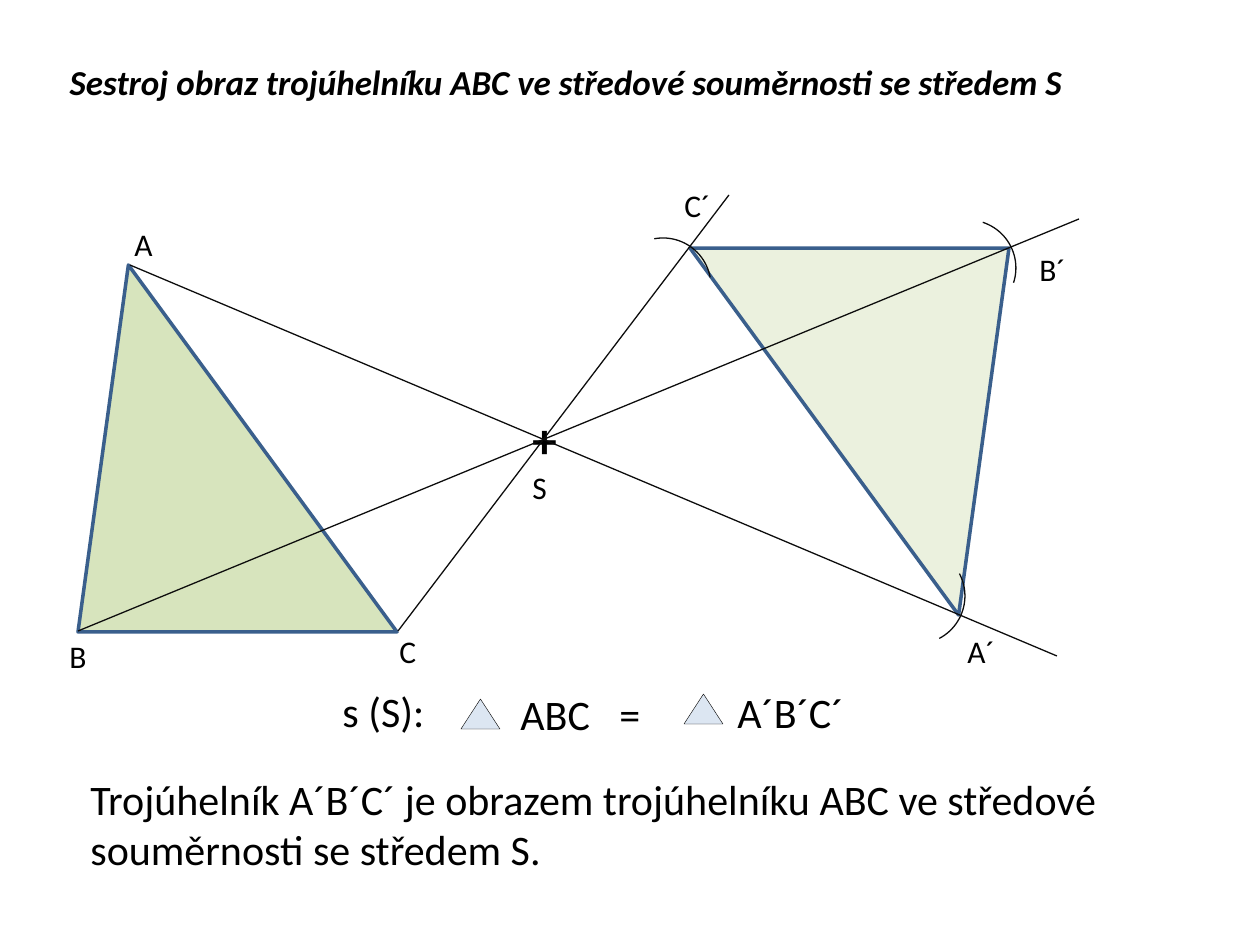
from lxml.etree import SubElement
from pptx import Presentation
from pptx.dml.color import RGBColor
from pptx.enum.shapes import MSO_CONNECTOR as Connector, MSO_SHAPE as Shape
from pptx.enum.text import MSO_ANCHOR as Anchor, MSO_AUTO_SIZE as AutoSize, PP_ALIGN as Align
from pptx.oxml.ns import qn
from pptx.util import Emu, Pt

SCALE = 914400 / 126


def px(value):
    return Emu(round(value * SCALE))


def color(value):
    return RGBColor.from_string(value)


class Board:
    font = "Calibri"
    ink = "000000"
    thin = "0D0D0D"
    edge = "3A5F8C"

    def __init__(self, page):
        self.page = page
        self.shapes = page.shapes

    def start_group(self):
        self.shapes = self.page.shapes.add_group_shape().shapes

    def end_group(self):
        self.shapes = self.page.shapes

    def place(self, item, left, top, width, height):
        item.left, item.top = px(left), px(top)
        item.width, item.height = px(width), px(height)

    def add_span(self, para, text, size, bold=False, italic=False):
        para.alignment = Align.LEFT
        span = para.add_run()
        span.text = text
        span.font.name = self.font
        span.font.size = Pt(size)
        span.font.bold = bold
        span.font.italic = italic
        span.font.color.rgb = color(self.ink)

    def title(self, text, left, top, width, height):
        box = self.page.shapes.title
        self.place(box, left, top, width, height)
        box.text_frame.vertical_anchor = Anchor.MIDDLE
        self.add_span(box.text_frame.paragraphs[0], text, 20, bold=True, italic=True)

    def text(self, lines, left, top, width, height, wrap=False, tab=None):
        box = self.shapes.add_textbox(px(left), px(top), px(width), px(height))
        frame = box.text_frame
        frame.word_wrap = wrap
        frame.auto_size = AutoSize.SHAPE_TO_FIT_TEXT
        for index, (text, size, bold) in enumerate(lines):
            para = frame.paragraphs[0] if index == 0 else frame.add_paragraph()
            self.add_span(para, text, size, bold)
            if tab:
                stops = SubElement(para._p.get_or_add_pPr(), qn("a:tabLst"))
                SubElement(stops, qn("a:tab"), pos=str(px(tab)), algn="l")

    def outline(self, kind, left, top, width, height, line, weight, fill=None):
        item = self.shapes.add_shape(kind, px(left), px(top), px(width), px(height))
        item.shadow.inherit = False
        item.line.color.rgb = color(line)
        item.line.width = Pt(weight)
        if fill:
            item.fill.solid()
            item.fill.fore_color.rgb = color(fill)
        else:
            item.fill.background()
        return item

    def triangle(self, left, top, fill, rotation=0):
        item = self.outline(Shape.ISOSCELES_TRIANGLE, left, top, 319, 367, self.edge, 2, fill)
        item.adjustments[0] = 0.158
        item.rotation = rotation

    def symbol(self, left, top):
        self.outline(Shape.ISOSCELES_TRIANGLE, left, top, 39, 30, self.thin, 0.25, "DCE6F2")

    def arc(self, left, top, rotation):
        self.outline(Shape.ARC, left, top, 96, 96, self.thin, 0.75).rotation = rotation

    def ray(self, x1, y1, x2, y2):
        line = self.shapes.add_connector(Connector.STRAIGHT, px(x1), px(y1), px(x2), px(y2))
        line.line.color.rgb = color(self.thin)
        line.line.width = Pt(0.75)
        SubElement(line._element.spPr, qn("a:effectLst"))


def main():
    deck = Presentation()
    deck.slide_width, deck.slide_height = px(1260), px(945)
    board = Board(deck.slides.add_slide(deck.slide_layouts[5]))

    board.title("Sestroj obraz trojúhelníku ABC ve středové souměrnosti se středem S",
                57, 38, 1019, 88)
    board.triangle(690, 248, "EBF1DE", 180)
    board.triangle(78, 265, "D7E4BD")
    board.text([("+", 28, True), ("S", 18, False)], 520, 403, 50, 111)

    for ray in [(78, 631, 1079, 219), (130, 265, 1057, 656), (398, 631, 729, 195)]:
        board.ray(*ray)
    for arc in [(869, 548, 62.3), (615, 238, 349.6), (920, 220, 18)]:
        board.arc(*arc)

    vertices = [("A", 122, 219, 44), ("B", 57, 631, 43), ("C", 387, 626, 43),
                ("A´", 955, 626, 53), ("B´", 1027, 244, 52), ("C´", 672, 180, 52)]
    for name, left, top, width in vertices:
        board.text([(name, 18, False)], left, top, width, 50)

    board.start_group()
    board.symbol(684, 694)
    board.text([("A´B´C´", 24, False)], 725, 680, 132, 63)
    board.text([("ABC\t=", 24, False)], 508, 682, 155, 63, tab=99)
    board.symbol(461, 699)
    board.text([("s (S):", 24, False)], 330, 679, 108, 63)
    board.end_group()

    answer = "Trojúhelník A´B´C´ je obrazem trojúhelníku ABC ve středové souměrnosti se středem S."
    board.text([(answer, 24, False)], 78, 767, 1110, 115, wrap=True)

    deck.save("out.pptx")


if __name__ == "__main__":
    main()
